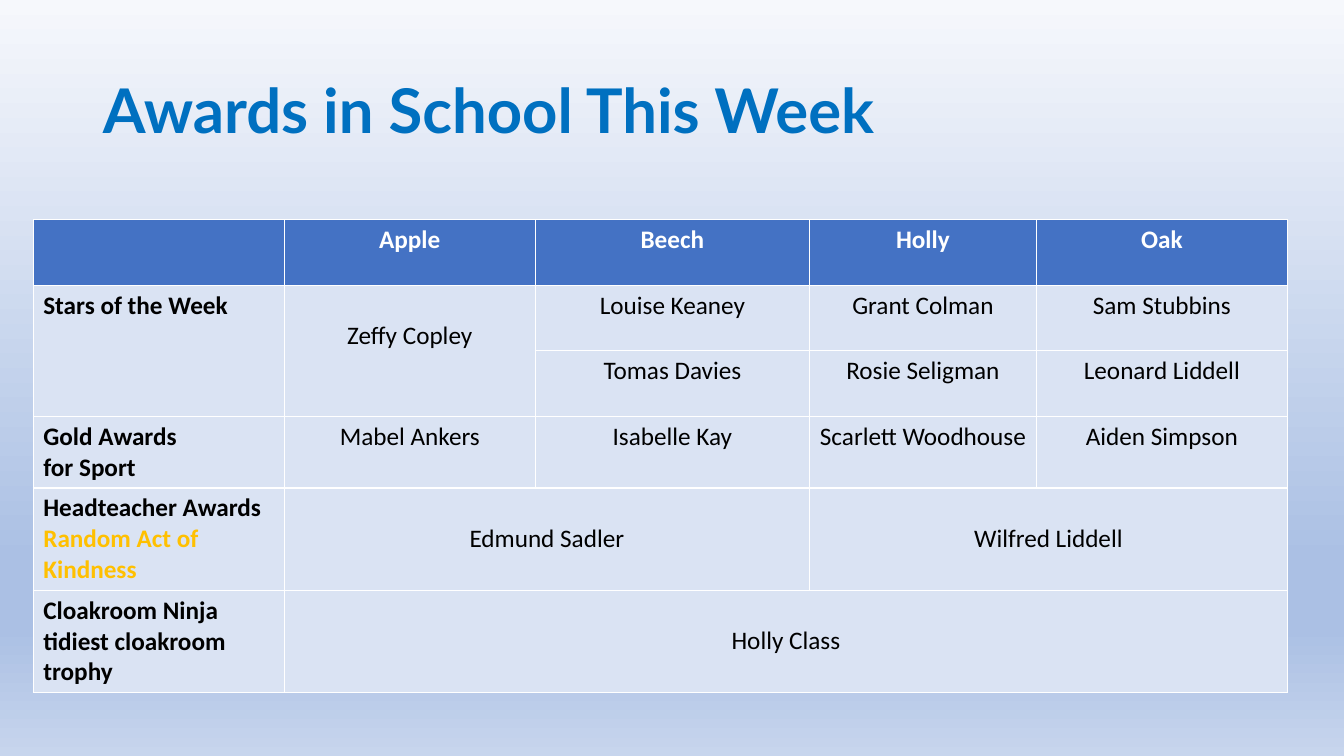
import copy
import pptx
import pptx.util
import pptx.dml.color
import pptx.enum.text
import pptx.oxml.ns

Inches = pptx.util.Inches
ALIGN = pptx.enum.text.PP_ALIGN
COLORS = {"title": "0070C0", "head": "4472C4", "body": "DAE3F3",
          "white": "FFFFFF", "black": "000000", "gold": "FFC000"}


def rgb(code):
    return pptx.dml.color.RGBColor.from_string(code)


def write(para, text, color="black", bold=False, size=18, font="Calibri",
          align=ALIGN.CENTER):
    para.alignment = align
    run = para.add_run()
    run.text = text
    run.font.name = font
    run.font.size = pptx.util.Pt(size)
    run.font.bold = bold
    run.font.color.rgb = rgb(COLORS[color])


deck = pptx.Presentation()
deck.slide_width, deck.slide_height = Inches(13.33), Inches(7.5)
slide = deck.slides.add_slide(deck.slide_layouts[5])

# Background gradient, top to bottom
shades = [(0, "F6F8FC"), (0.74, "ABC0E4"), (0.83, "ABC0E4"), (1, "C7D5ED")]
back = slide.background.fill
back.gradient()
back.gradient_angle = 270
stops = slide.element.find(".//" + pptx.oxml.ns.qn("a:gsLst"))
while len(stops) < len(shades):
    stops.append(copy.deepcopy(stops[0]))
for stop, (place, shade) in zip(back.gradient_stops, shades):
    stop.position = place
    stop.color.rgb = rgb(shade)

# Title
title = slide.shapes.title
title.left, title.top = Inches(0.92), Inches(0.4)
title.width, title.height = Inches(11.5), Inches(1.45)
title.text_frame.vertical_anchor = pptx.enum.text.MSO_ANCHOR.MIDDLE
heading = title.text_frame.paragraphs[0]
heading.line_spacing = 0.9
write(heading, "Awards in School This Week", color="title", bold=True,
      size=44, font="Lato", align=ALIGN.LEFT)

# Awards table
awards = [
    ["", "Apple", "Beech", "Holly", "Oak"],
    ["Stars of the Week", "Zeffy Copley", "Louise Keaney", "Grant Colman",
     "Sam Stubbins"],
    ["", "", "Tomas Davies", "Rosie Seligman", "Leonard Liddell"],
    ["Gold Awards\nfor Sport", "Mabel Ankers", "Isabelle Kay",
     "Scarlett Woodhouse", "Aiden Simpson"],
    ["Headteacher Awards ", "Edmund Sadler", "", "Wilfred Liddell", ""],
    ["Cloakroom Ninja tidiest cloakroom trophy", "Holly Class", "", "", ""],
]
widths = [2.49, 2.49, 2.72, 2.25, 2.49]
frame = slide.shapes.add_table(len(awards), len(widths), Inches(0.33),
                               Inches(2.18), Inches(12.43), Inches(4.65))
table = frame.table
table.horz_banding = False
for col, width in zip(table.columns, widths):
    col.width = Inches(width)
for row in table.rows:
    row.height = Inches(0.65)
frame.height = Inches(4.65)

for r, row in enumerate(awards):
    for c, text in enumerate(row):
        cell = table.cell(r, c)
        cell.fill.solid()
        cell.fill.fore_color.rgb = rgb(COLORS["body" if r else "head"])
        if not text:
            continue
        for n, line in enumerate(text.split("\n")):
            body = cell.text_frame
            para = body.add_paragraph() if n else body.paragraphs[0]
            write(para, line, color="black" if r else "white",
                  bold=r == 0 or c == 0,
                  align=ALIGN.CENTER if c else ALIGN.LEFT)

# Second part of the headteacher label
write(table.cell(4, 0).text_frame.paragraphs[0], "Random Act of Kindness",
      color="gold", bold=True, align=ALIGN.LEFT)

# Merged cells: first and last corner
spans = [((1, 0), (2, 0)), ((1, 1), (2, 1)), ((4, 1), (4, 2)),
         ((4, 3), (4, 4)), ((5, 1), (5, 4))]
for first, last in spans:
    cell = table.cell(*first)
    cell.merge(table.cell(*last))
    if first[1]:
        cell.margin_top = Inches(0.35)  # names sit one line lower

deck.save("out.pptx")
